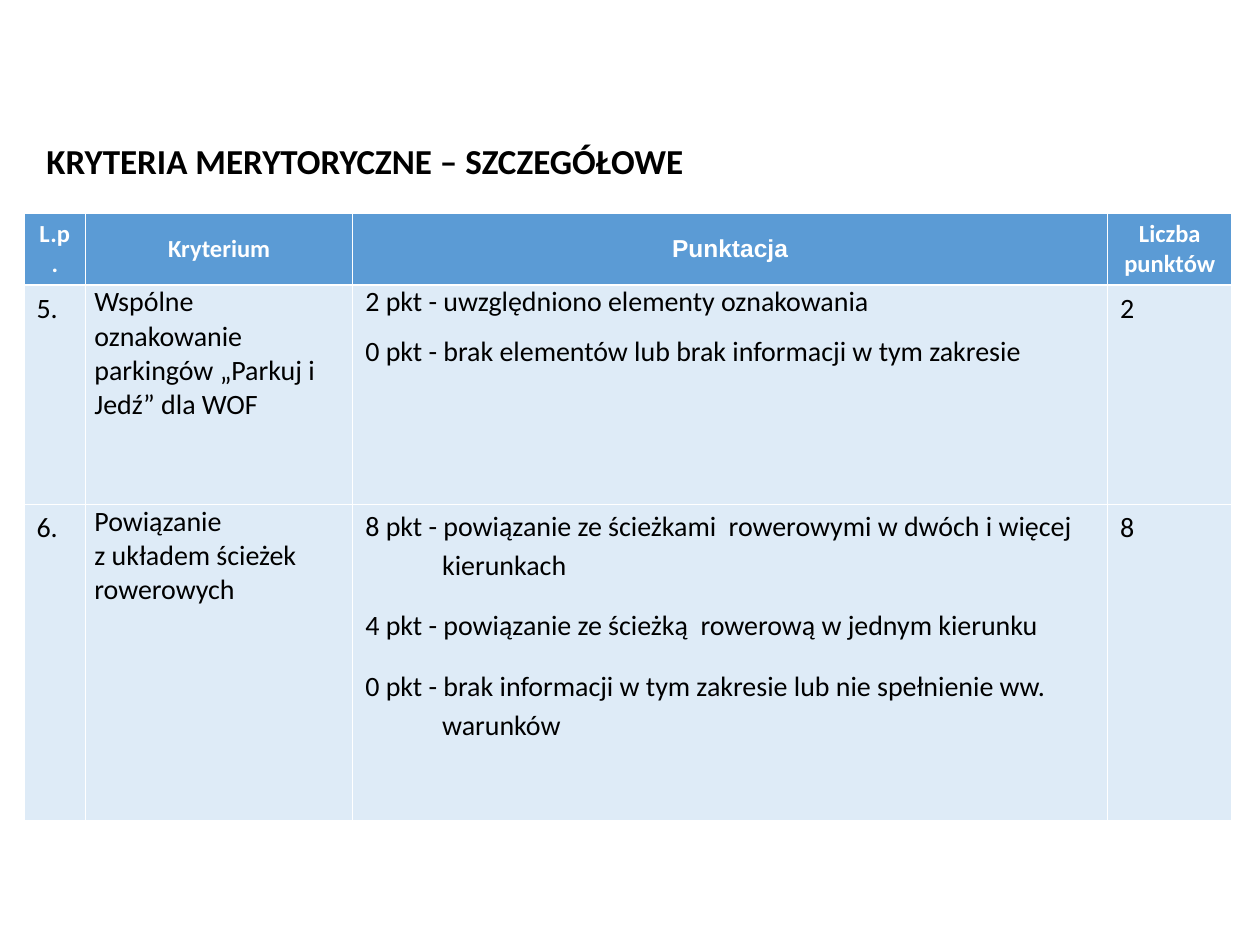
from pptx import Presentation
from pptx.dml.color import RGBColor
from pptx.enum import text
from pptx.util import Inches, Pt

TITLE = "KRYTERIA MERYTORYCZNE – SZCZEGÓŁOWE"
HEADERS = ["L.p.", "Kryterium", "Punktacja", "Liczba punktów"]
CRITERIA = [
    ("5.", "Wspólne oznakowanie parkingów „Parkuj i Jedź” dla WOF",
     ["2 pkt - uwzględniono elementy oznakowania",
      "0 pkt - brak elementów lub brak informacji w tym zakresie"], "2"),
    ("6.", "Powiązanie \vz układem ścieżek rowerowych",
     ["8 pkt - powiązanie ze ścieżkami  rowerowymi w dwóch i więcej kierunkach",
      "4 pkt - powiązanie ze ścieżką  rowerową w jednym kierunku",
      "0 pkt - brak informacji w tym zakresie lub nie spełnienie ww. warunków"], "8"),
]
COLUMN_WIDTHS = [0.49, 2.12, 5.99, 0.99]
ROW_HEIGHTS = [0.53, 1.74, 2.51]
SIDE_MARGINS = {1: 0.07, 2: 0}
SCORING = 2
HANGING = 0.61


def color(value):
    return RGBColor.from_string(value)


def style(para, size, shade, bold=False, face="Calibri"):
    for span in para.runs:
        span.font.name = face
        span.font.size = Pt(size)
        span.font.bold = bold
        span.font.color.rgb = color(shade)


def fill_cell(cell, words, shade):
    cell.text_frame.text = words
    cell.fill.solid()
    cell.fill.fore_color.rgb = color(shade)


def space_scoring(paras, single_first):
    for index, para in enumerate(paras):
        props = para._p.get_or_add_pPr()
        props.set("marL", str(Inches(0.1 + HANGING)))
        props.set("indent", str(-Inches(HANGING)))
        if index or not single_first:
            para.line_spacing = 1.15
            para.space_after = Pt(6)
        if index:
            para.space_before = Pt(6)


deck = Presentation()
deck.slide_width, deck.slide_height = Inches(10), Inches(7.5)
page = deck.slides.add_slide(deck.slide_layouts[6])

table = page.shapes.add_table(
    len(ROW_HEIGHTS), len(COLUMN_WIDTHS), Inches(0.19), Inches(1.69),
    Inches(sum(COLUMN_WIDTHS)), Inches(sum(ROW_HEIGHTS))).table
for column, width in zip(table.columns, COLUMN_WIDTHS):
    column.width = Inches(width)
for row, height in zip(table.rows, ROW_HEIGHTS):
    row.height = Inches(height)

for number, heading in enumerate(HEADERS):
    cell = table.cell(0, number)
    fill_cell(cell, heading, "5B9BD5")
    cell.vertical_anchor = text.MSO_ANCHOR.MIDDLE
    para = cell.text_frame.paragraphs[0]
    para.alignment = text.PP_ALIGN.CENTER
    style(para, 14, "FFFFFF", True, "Arial" if number == SCORING else "Calibri")

for line, criterion in enumerate(CRITERIA, 1):
    for number, content in enumerate(criterion):
        cell = table.cell(line, number)
        words = "\n".join(content) if number == SCORING else content
        fill_cell(cell, words, "DEEBF7")
        if number in SIDE_MARGINS:
            cell.margin_left = cell.margin_right = Inches(SIDE_MARGINS[number])
            cell.margin_top = cell.margin_bottom = 0
        paras = cell.text_frame.paragraphs
        if number == SCORING:
            space_scoring(paras, line == 1)
        for para in paras:
            style(para, 16, "000000")

box = page.shapes.add_textbox(Inches(0.27), Inches(1.05), Inches(5.3), Inches(0.44))
frame = box.text_frame
frame.text = TITLE
frame.word_wrap = False
frame.auto_size = text.MSO_AUTO_SIZE.SHAPE_TO_FIT_TEXT
frame.vertical_anchor = text.MSO_ANCHOR.MIDDLE
style(frame.paragraphs[0], 20, "000000", True)

deck.save("out.pptx")
